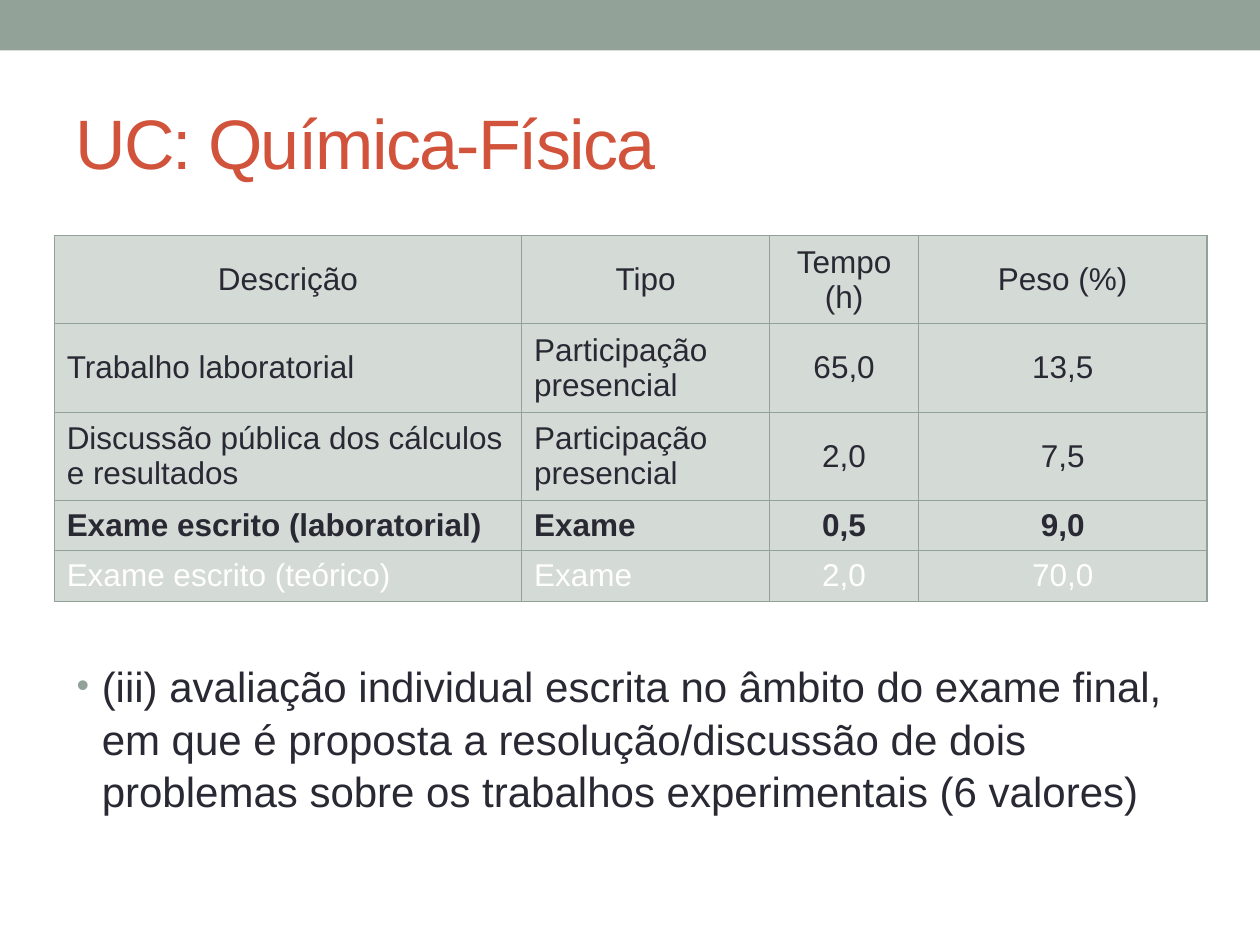
import pptx
import pptx.util
import pptx.dml.color
import pptx.enum.shapes
import pptx.enum.text
import pptx.oxml
import pptx.oxml.ns
from pptx.util import Inches

SAGE, PALE, RED, INK, WHITE = "93A299", "D4DAD6", "D2533C", "292934", "FFFFFF"
MIDDLE = pptx.enum.text.MSO_ANCHOR.MIDDLE
CENTER = pptx.enum.text.PP_ALIGN.CENTER
LEFT = pptx.enum.text.PP_ALIGN.LEFT
COLUMN_WIDTHS = [3.71, 1.97, 1.18, 2.29]
ROW_HEIGHTS = [0.66, 0.66, 0.66, 0.38, 0.38]
ROWS = [
    ["Descrição", "Tipo", "Tempo (h)", "Peso (%)"],
    ["Trabalho laboratorial", "Participação presencial", "65,0", "13,5"],
    ["Discussão pública dos cálculos e resultados", "Participação presencial", "2,0", "7,5"],
    ["Exame escrito (laboratorial)", "Exame", "0,5", "9,0"],
    ["Exame escrito (teórico)", "Exame", "2,0", "70,0"],
]
BOLD_ROW, WHITE_ROW = 3, 4


def color(value):
    """Return the colour for a hex string."""
    return pptx.dml.color.RGBColor.from_string(value)


def add_xml(parent, markup):
    """Append a DrawingML element to a parent element."""
    namespace = pptx.oxml.ns.nsdecls("a")
    parent.append(pptx.oxml.parse_xml(markup.replace(" ", f" {namespace} ", 1)))


def format_span(span, size, value, bold=False):
    """Set the font of a run."""
    span.font.name = "Arial"
    span.font.size = pptx.util.Pt(size)
    span.font.bold = bold
    span.font.color.rgb = color(value)


def add_text(page, left, top, width, height, text, size, value):
    """Add a wrapping text box and return its frame."""
    box = page.shapes.add_textbox(Inches(left), Inches(top), Inches(width), Inches(height))
    frame = box.text_frame
    frame.word_wrap = True
    frame.text = text
    format_span(frame.paragraphs[0].runs[0], size, value)
    return frame


def add_band(page, left, top, width, height):
    """Draw the plain band along the top edge."""
    band = page.shapes.add_shape(pptx.enum.shapes.MSO_SHAPE.RECTANGLE,
                                 Inches(left), Inches(top), Inches(width), Inches(height))
    band.shadow.inherit = False
    band.fill.solid()
    band.fill.fore_color.rgb = color(SAGE)
    band.line.fill.background()


def add_title(page, left, top, width, height):
    """Place the slide title."""
    frame = add_text(page, left, top, width, height, "UC: Química-Física", 40, RED)
    frame.vertical_anchor = MIDDLE
    frame.paragraphs[0].runs[0].font._element.set("spc", "-100")


def add_bullet(page, left, top, width, height):
    """Place the bulleted note below the table."""
    text = ("(iii) avaliação individual escrita no âmbito do exame final, em que é proposta "
            "a resolução/discussão de dois problemas sobre os trabalhos experimentais (6 valores)")
    frame = add_text(page, left, top, width, height, text, 24, INK)
    frame.margin_top = Inches(1)
    para = frame.paragraphs[0]
    para.line_spacing = 1.05
    properties = para._p.get_or_add_pPr()
    properties.set("marL", str(Inches(0.2)))
    properties.set("indent", str(-Inches(0.2)))
    add_xml(properties, f'<a:buClr ><a:srgbClr val="{SAGE}"/></a:buClr>')
    add_xml(properties, '<a:buSzPct val="85000"/>')
    add_xml(properties, '<a:buFont typeface="Arial"/>')
    add_xml(properties, '<a:buChar char="•"/>')


def format_cell(cell, text, row, column):
    """Fill one table cell and set its text and borders."""
    cell.text = text
    cell.vertical_anchor = MIDDLE
    if row == 0:
        cell.margin_left = cell.margin_right = Inches(0.04)
    para = cell.text_frame.paragraphs[0]
    para.alignment = CENTER if row == 0 or column >= 2 else LEFT
    format_span(para.runs[0], 18, WHITE if row == WHITE_ROW else INK, row == BOLD_ROW)
    properties = cell._tc.get_or_add_tcPr()
    for side in ("lnL", "lnR", "lnT", "lnB"):
        add_xml(properties, f'<a:{side} w="9525"><a:solidFill>'
                            f'<a:srgbClr val="{SAGE}"/></a:solidFill></a:{side}>')
    cell.fill.solid()
    cell.fill.fore_color.rgb = color(PALE)


def add_grades(page, left, top):
    """Build the assessment table."""
    frame = page.shapes.add_table(len(ROWS), len(COLUMN_WIDTHS), Inches(left), Inches(top),
                                  Inches(sum(COLUMN_WIDTHS)), Inches(sum(ROW_HEIGHTS)))
    table = frame.table
    table.horz_banding = False
    for column, width in zip(table.columns, COLUMN_WIDTHS):
        column.width = Inches(width)
    for row, height in zip(table.rows, ROW_HEIGHTS):
        row.height = Inches(height)
    for row, texts in enumerate(ROWS):
        for column, text in enumerate(texts):
            format_cell(table.cell(row, column), text, row, column)


def main():
    """Build and save the slide."""
    deck = pptx.Presentation()
    deck.slide_width, deck.slide_height = Inches(10), Inches(7.5)
    page = deck.slides.add_slide(deck.slide_layouts[6])
    add_band(page, 0, 0, 10, 0.4)
    add_title(page, 0.5, 0.58, 9, 1.08)
    add_bullet(page, 0.51, 4.22, 9.06, 2.87)
    add_grades(page, 0.43, 1.87)
    deck.save("out.pptx")


if __name__ == "__main__":
    main()
